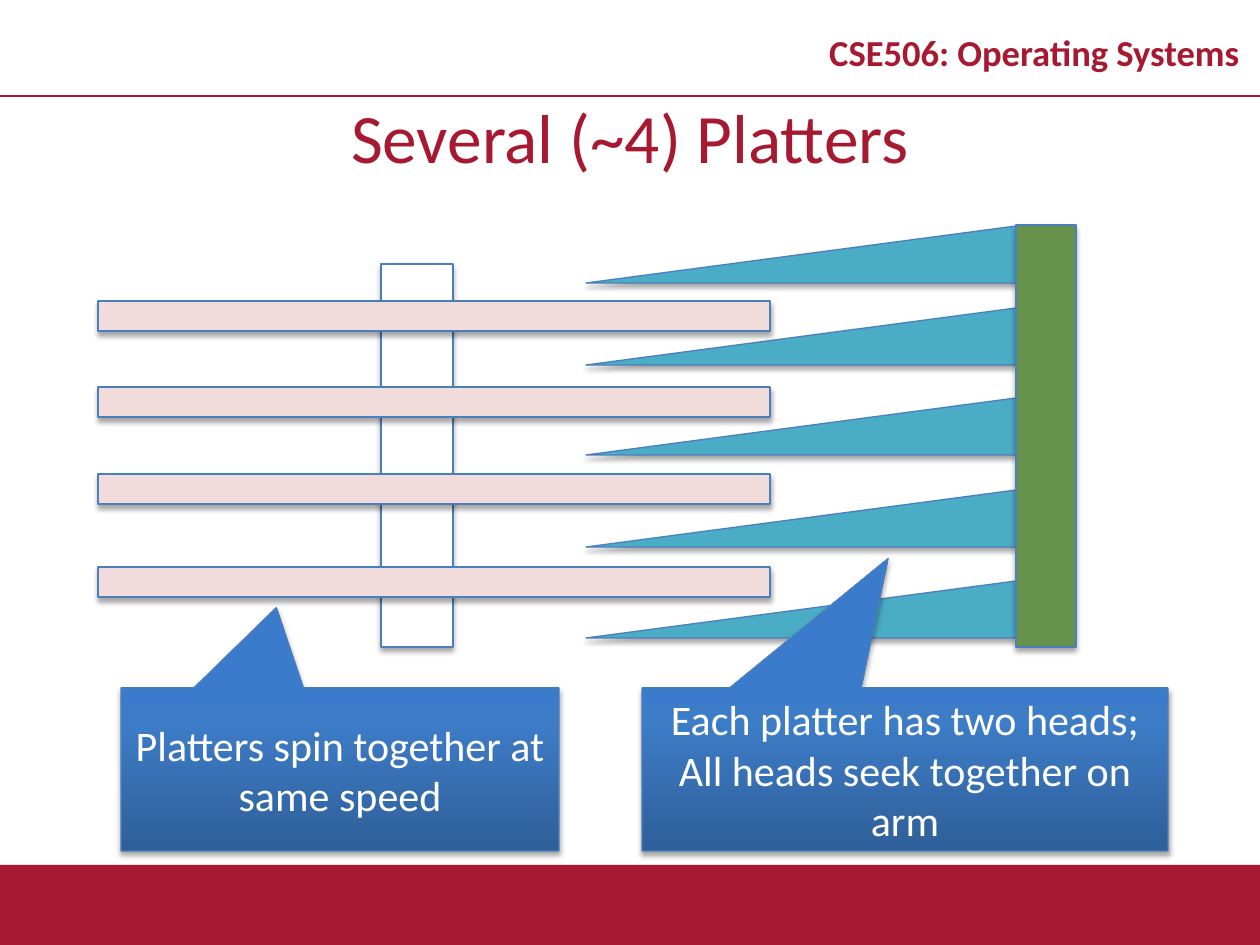
"""Build the slide on disk platters, heads and the arm that moves them."""
from copy import deepcopy

from lxml.etree import SubElement
from pptx import Presentation
from pptx.dml.color import RGBColor
from pptx.enum.shapes import MSO_CONNECTOR, MSO_SHAPE
from pptx.enum.text import MSO_ANCHOR, MSO_AUTO_SIZE, PP_ALIGN
from pptx.oxml.ns import qn
from pptx.util import Emu, Pt

WIDTH, HEIGHT = 1260, 945
EMU_PER_PX = 914400 / 126
RED, BLUE, WHITE = "A71930", "4B7EBC", "FFFFFF"
PINK, TEAL, GREEN = "F2DCDB", "4BACC6", "67924B"
GRADIENT = [(0, "2F5F99"), (0.8, "3D7CC7"), (1, "3A7CCB")]

HEADER = ("CSE506: Operating Systems", (809, 16, 451, 80))
TITLE = ("Several (~4) Platters", (0, 96, WIDTH, 80))
FOOTER = (0, 865, WIDTH, 80)
SPINDLE = (381, 264, 72, 383)
ARM = (1016, 225, 60, 422)
PLATTER_TOPS = [301, 387, 474, 567]
HEAD_TOPS = [226, 308, 398, 490, 581]
CALLOUTS = [
    ("Platters spin together at same speed", (121, 688, 438, 163), (-0.145, -0.993)),
    ("Each platter has two heads; All heads seek together on arm",
     (642, 688, 526, 163), (-0.032, -1.294)),
]


def px(value):
    return Emu(round(value * EMU_PER_PX))


def color(value):
    return RGBColor.from_string(value)


def write(shape, text, size, fill=WHITE, bold=False, spacing=None):
    frame = shape.text_frame
    frame.word_wrap = True
    frame.auto_size = MSO_AUTO_SIZE.NONE
    frame.vertical_anchor = MSO_ANCHOR.MIDDLE
    paragraph = frame.paragraphs[0]
    paragraph.text = text
    paragraph.alignment = PP_ALIGN.CENTER
    if spacing:
        paragraph.line_spacing = spacing
    font = paragraph.font
    font.name, font.size, font.bold = "Calibri", Pt(size), bold
    font.color.rgb = color(fill)


def add_shadow(shape):
    shape.shadow.inherit = False
    effects = shape.element.spPr.find(qn("a:effectLst"))
    shadow = SubElement(effects, qn("a:outerShdw"), blurRad=str(Pt(3.1)),
                        dist=str(Pt(1.8)), dir="5400000", rotWithShape="0")
    black = SubElement(shadow, qn("a:srgbClr"), val="000000")
    SubElement(black, qn("a:alpha"), val="35000")


def add_box(slide, kind, box, fill=None, line=BLUE):
    shape = slide.shapes.add_shape(kind, *map(px, box))
    if fill:
        shape.fill.solid()
        shape.fill.fore_color.rgb = color(fill)
    if line:
        shape.line.color.rgb = color(line)
        shape.line.width = Pt(0.75)
    else:
        shape.line.fill.background()
    add_shadow(shape)
    return shape


def add_callout(slide, text, box, tip):
    shape = add_box(slide, MSO_SHAPE.RECTANGULAR_CALLOUT, box)
    shape.adjustments[0], shape.adjustments[1] = tip
    shape.fill.gradient()
    shape.fill.gradient_angle = 90
    stops = shape.element.spPr.find(qn("a:gradFill")).find(qn("a:gsLst"))
    stops.append(deepcopy(stops[-1]))
    for stop, (position, value) in zip(shape.fill.gradient_stops, GRADIENT):
        stop.position = position
        stop.color.rgb = color(value)
    write(shape, text, 24)


def add_header(slide):
    add_box(slide, MSO_SHAPE.RECTANGLE, FOOTER, RED, line=None)
    rule = slide.shapes.add_connector(MSO_CONNECTOR.STRAIGHT, 0, px(96), px(WIDTH), px(96))
    rule.line.color.rgb = color(RED)
    rule.line.width = Pt(1)
    SubElement(rule.element.spPr, qn("a:effectLst"))
    text, box = HEADER
    write(slide.shapes.add_textbox(*map(px, box)), text, 20.9, RED, bold=True, spacing=0.8)
    text, box = TITLE
    title = slide.shapes.title
    title.left, title.top, title.width, title.height = map(px, box)
    write(title, text, 39.6, RED)


def add_disk(slide):
    add_box(slide, MSO_SHAPE.RECTANGLE, SPINDLE, WHITE)
    for top in PLATTER_TOPS:
        add_box(slide, MSO_SHAPE.RECTANGLE, (98, top, 672, 30), PINK)
    for top in HEAD_TOPS:
        head = add_box(slide, MSO_SHAPE.RIGHT_TRIANGLE, (586, top, 430, 57), TEAL)
        head.element.spPr.xfrm.set("flipH", "1")
    add_box(slide, MSO_SHAPE.RECTANGLE, ARM, GREEN)


def main():
    presentation = Presentation()
    presentation.slide_width, presentation.slide_height = px(WIDTH), px(HEIGHT)
    slide = presentation.slides.add_slide(presentation.slide_layouts[5])
    add_header(slide)
    add_disk(slide)
    for text, box, tip in CALLOUTS:
        add_callout(slide, text, box, tip)
    presentation.save("out.pptx")


if __name__ == "__main__":
    main()
